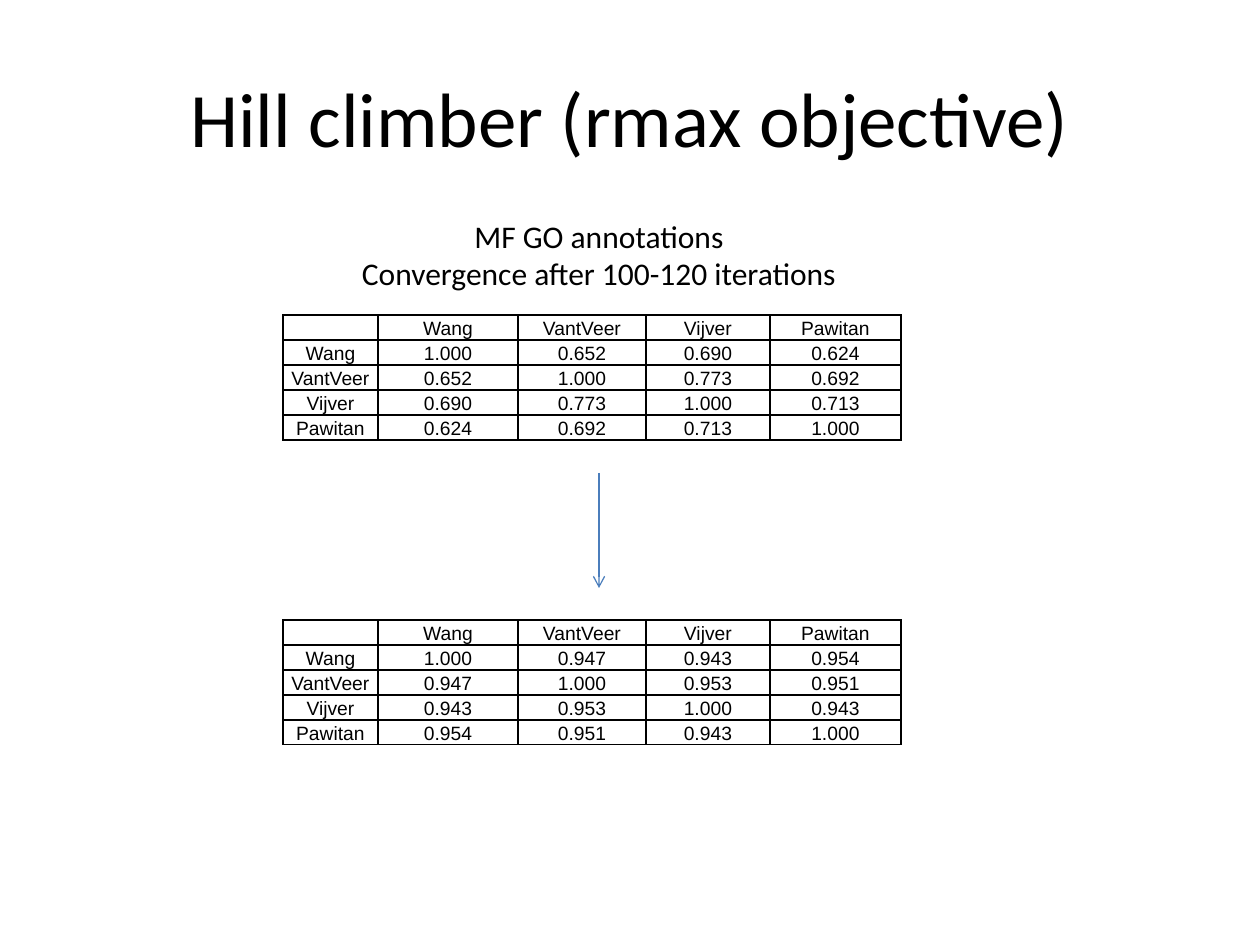
import itertools

import pptx
import pptx.dml.color
import pptx.enum.shapes
import pptx.enum.text
import pptx.oxml.ns
import pptx.util
from lxml import etree

SCALE = 914400 / 126
BLACK = "000000"
BLUE = "4B7EBC"
NAMES = ["Wang", "VantVeer", "Vijver", "Pawitan"]
COLS = [95, 140, 128, 124, 131]
ROW = 25
# Similarity of each pair of names, in the order of itertools.combinations
BEFORE = ["0.652", "0.690", "0.624", "0.773", "0.692", "0.713"]
AFTER = ["0.947", "0.943", "0.954", "0.953", "0.951", "0.943"]


def px(n):
    return pptx.util.Emu(round(n * SCALE))


def color(code):
    return pptx.dml.color.RGBColor.from_string(code)


def add(node, tag, **attrs):
    return etree.SubElement(node, pptx.oxml.ns.qn(tag), attrs)


def style(frame, font, size):
    for para in frame.paragraphs:
        para.alignment = pptx.enum.text.PP_ALIGN.CENTER
        for run in para.runs:
            run.font.name = font
            run.font.size = pptx.util.Pt(size)
            run.font.color.rgb = color(BLACK)
        if not para.runs:
            # Keeps an empty cell from growing to the default text size
            add(para._p, "a:endParaRPr", sz=str(size * 100))


def label(slide, box, text, size):
    frame = slide.shapes.add_textbox(*map(px, box)).text_frame
    frame.word_wrap = True
    frame.vertical_anchor = pptx.enum.text.MSO_ANCHOR.MIDDLE
    frame.text = text
    style(frame, "Calibri", size)


def matrix(scores):
    """Symmetric grid of scores with a header row and column."""
    pairs = dict(zip(itertools.combinations(NAMES, 2), scores))
    rows = [[""] + NAMES]
    for a in NAMES:
        rows.append([a] + [pairs.get((a, b)) or pairs.get((b, a), "1.000")
                           for b in NAMES])
    return rows


def border(cell):
    props = cell._tc.get_or_add_tcPr()
    for side in ("L", "R", "T", "B"):
        line = add(props, f"a:ln{side}", w="12700")
        add(add(line, "a:solidFill"), "a:srgbClr", val=BLACK)


def grid(slide, left, top, scores):
    rows = matrix(scores)
    size = (sum(COLS), ROW * len(rows))
    table = slide.shapes.add_table(
        len(rows), len(COLS), *map(px, (left, top) + size)).table
    table.first_row = table.horz_banding = False
    for col, width in zip(table.columns, COLS):
        col.width = px(width)
    for row, texts in zip(table.rows, rows):
        row.height = px(ROW)
        for cell, text in zip(row.cells, texts):
            cell.margin_left = cell.margin_right = 0
            cell.margin_top = cell.margin_bottom = 0
            cell.vertical_anchor = pptx.enum.text.MSO_ANCHOR.BOTTOM
            cell.text_frame.text = text
            style(cell.text_frame, "Arial", 11)
            border(cell)
            cell.fill.background()


def arrow(slide, x, top, bottom):
    line = slide.shapes.add_connector(
        pptx.enum.shapes.MSO_CONNECTOR.STRAIGHT,
        *map(px, (x, top, x, bottom)))
    line.line.color.rgb = color(BLUE)
    line.line.width = pptx.util.Pt(0.75)
    add(line.line._get_or_add_ln(), "a:tailEnd", type="arrow")
    add(line._element.spPr, "a:effectLst")


def main():
    deck = pptx.Presentation()
    deck.slide_width, deck.slide_height = px(1260), px(945)
    slide = deck.slides.add_slide(deck.slide_layouts[6])
    label(slide, (63, 38, 1134, 158), "Hill climber (rmax objective)", 44)
    grid(slide, 283, 315, BEFORE)
    arrow(slide, 599, 473, 588)
    grid(slide, 283, 620, AFTER)
    label(slide, (95, 210, 1008, 89),
          "MF GO annotations\nConvergence after 100-120 iterations", 18)
    deck.save("out.pptx")


if __name__ == "__main__":
    main()
